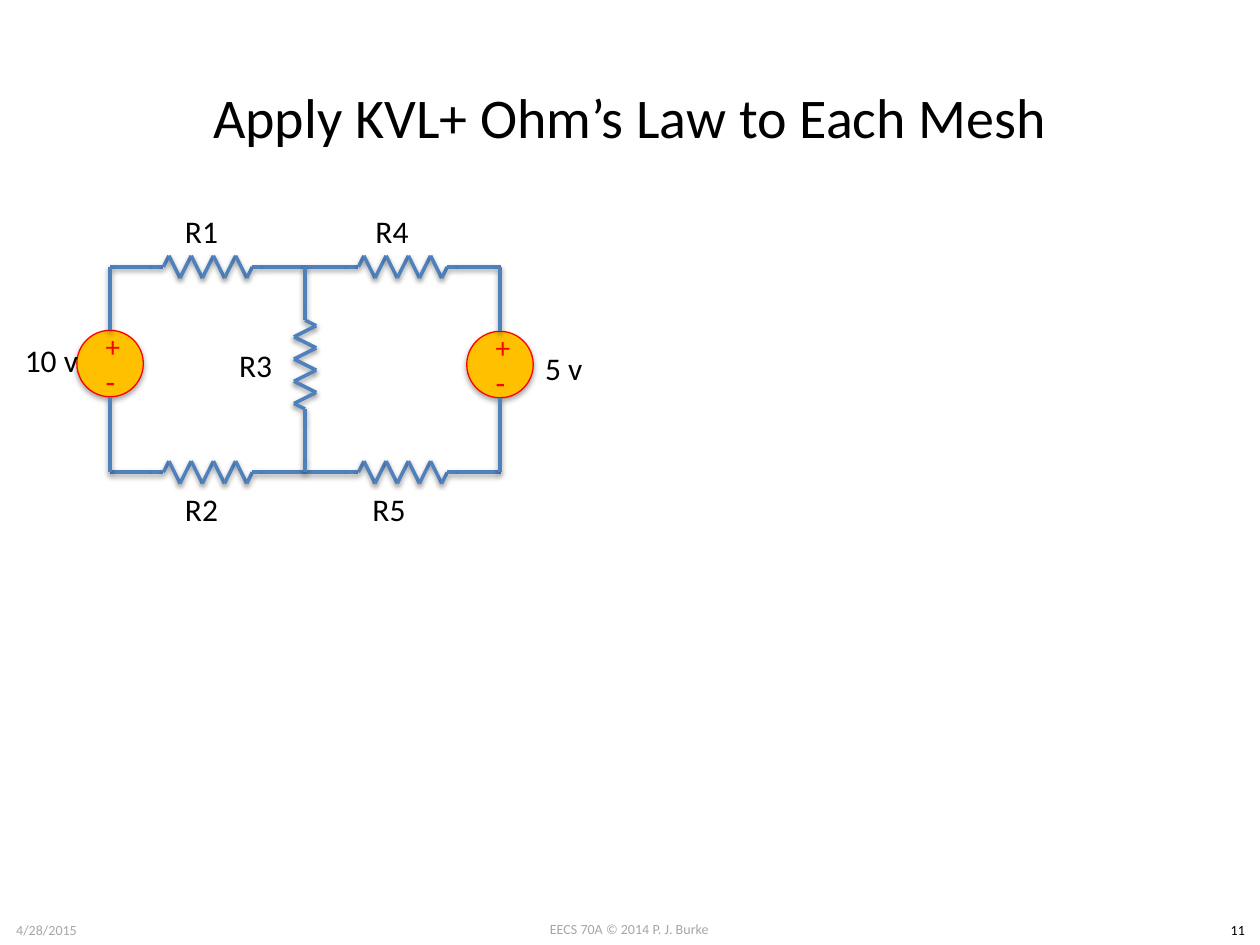
"""Builds a slide with a two-mesh circuit of five resistors and two sources."""
from dataclasses import dataclass

from lxml import etree
from pptx import Presentation
from pptx.dml.color import RGBColor
from pptx.enum.shapes import MSO_CONNECTOR, MSO_SHAPE
from pptx.enum.text import MSO_ANCHOR, MSO_AUTO_SIZE, PP_ALIGN
from pptx.oxml.ns import qn
from pptx.util import Cm, Pt

LINE, DISC = MSO_CONNECTOR.STRAIGHT, MSO_SHAPE.OVAL
MIDDLE, TOP = MSO_ANCHOR.MIDDLE, MSO_ANCHOR.TOP
LEFT, CENTER = PP_ALIGN.LEFT, PP_ALIGN.CENTER
GROW, FIXED = MSO_AUTO_SIZE.SHAPE_TO_FIT_TEXT, MSO_AUTO_SIZE.NONE


@dataclass(frozen=True)
class Theme:
    font: str = "Calibri"
    ink: str = "000000"
    grey: str = "A6A6A6"
    blue: str = "4F81BD"
    gold: str = "FFC000"
    red: str = "FF0000"
    head: float = 32
    body: float = 18
    plus: float = 16.6
    foot: float = 8
    thick: float = 2
    thin: float = 0.75


def assign(item, values):
    for name, value in values.items():
        setattr(item, name, value)


class Board:
    def __init__(self, slide, theme):
        self.slide, self.theme = slide, theme

    def letter(self, shape, words, size, color, align, frame):
        assign(shape.text_frame, frame)
        part = shape.text_frame.paragraphs[0]
        part.alignment = align
        run = part.add_run()
        run.text = words
        assign(run.font, {"name": self.theme.font, "size": Pt(size)})
        run.font.color.rgb = RGBColor.from_string(color)

    def title(self, words, box):
        shape = self.slide.shapes.title
        assign(shape, dict(zip(("left", "top", "width", "height"), map(Cm, box))))
        self.letter(shape, words, self.theme.head, self.theme.ink, CENTER,
                    {"vertical_anchor": MIDDLE, "word_wrap": True})

    def text(self, words, box, size, color, align=LEFT, wrap=True, anchor=TOP, fit=GROW):
        shape = self.slide.shapes.add_textbox(*map(Cm, box))
        self.letter(shape, words, size, color, align,
                    {"word_wrap": wrap, "vertical_anchor": anchor, "auto_size": fit})

    def label(self, words, x, y, width=1.19):
        self.text(words, (x, y, width, 1.02), self.theme.body, self.theme.ink, wrap=False)

    def shade(self, shape, drop, alpha):
        props = shape._element.spPr
        effects = etree.SubElement(props, qn("a:effectLst"))
        shadow = etree.SubElement(effects, qn("a:outerShdw"), blurRad=str(Pt(3.1)),
                                  dist=str(Pt(drop)), dir="5400000", rotWithShape="0")
        color = etree.SubElement(shadow, qn("a:srgbClr"), val=self.theme.ink)
        etree.SubElement(color, qn("a:alpha"), val=str(alpha * 1000))

    def stroke(self, shape, color, width):
        shape.line.color.rgb = RGBColor.from_string(color)
        shape.line.width = Pt(width)

    def wire(self, start, end):
        line = self.slide.shapes.add_connector(LINE, *map(Cm, (*start, *end)))
        self.stroke(line, self.theme.blue, self.theme.thick)
        self.shade(line, 1.6, 38)

    def zigzag(self, x, y, dx, dy, lead=0.85, length=2.24):
        step = length / 10
        marks = [(0, 0), (lead, 0), (lead + step, 0)]
        marks += [(lead + step * (i + 1.5), step * (-1) ** i) for i in range(8)]
        marks += [(lead + 9 * step, 0), (lead + length, 0), (2 * lead + length, 0)]
        points = [(x + a * dx + s * dy, y + a * dy - s * dx) for a, s in marks]
        for start, end in zip(points, points[1:]):
            self.wire(start, end)

    def source(self, x, y, top, base, radius=0.67):
        theme = self.theme
        disc = self.slide.shapes.add_shape(
            DISC, *map(Cm, (x - radius, y - radius, 2 * radius, 2 * radius)))
        disc.fill.solid()
        disc.fill.fore_color.rgb = RGBColor.from_string(theme.gold)
        self.stroke(disc, theme.red, theme.thin)
        self.shade(disc, 1.8, 35)
        for sign, drop, size in (("+", -0.78, theme.plus), ("-", -0.07, theme.body)):
            self.text(sign, (x - 0.34, y + drop, 0.66, 0.84), size, theme.red,
                      CENTER, anchor=MIDDLE, fit=FIXED)
        self.wire((x, base), (x, y + radius))
        self.wire((x, y - radius), (x, top))


def main():
    deck = Presentation()
    assign(deck, {"slide_width": Cm(25.4), "slide_height": Cm(19.05)})
    theme = Theme()
    board = Board(deck.slides.add_slide(deck.slide_layouts[5]), theme)

    for words, box, color in (
        ("EECS 70A © 2014 P. J. Burke", (9.73, 18.44, 5.92, 0.6), theme.grey),
        ("4/28/2015", (0, 18.46, 1.88, 0.6), theme.grey),
        ("11", (24.51, 18.46, 0.89, 0.6), theme.ink),
    ):
        board.text(words, box, theme.foot, color, CENTER)
    board.title("Apply KVL+ Ohm’s Law to Each Mesh", (1.27, 0.76, 22.86, 3.18))

    left, mid, right = (2.22 + 3.93 * i for i in range(3))
    top, base = 5.38, 9.52
    for y in (top, base):
        for x in (left, mid):
            board.zigzag(x, y, 1, 0)
    board.zigzag(mid, top, 0, 1)
    board.wire((mid, 9.3), (mid, base))
    for x, y in ((left, 7.33), (right, 7.35)):
        board.source(x, y, top, base)

    for words, x, y in (("R1", 3.48, 4.14), ("R4", 7.32, 4.14), ("R5", 7.26, 9.75),
                        ("R3", 4.57, 6.86), ("R2", 3.48, 9.75)):
        board.label(words, x, y)
    board.label("5 v", 10.74, 6.91, 1.27)
    board.label("10 v", 0.25, 6.76, 1.6)
    deck.save("out.pptx")


if __name__ == "__main__":
    main()
